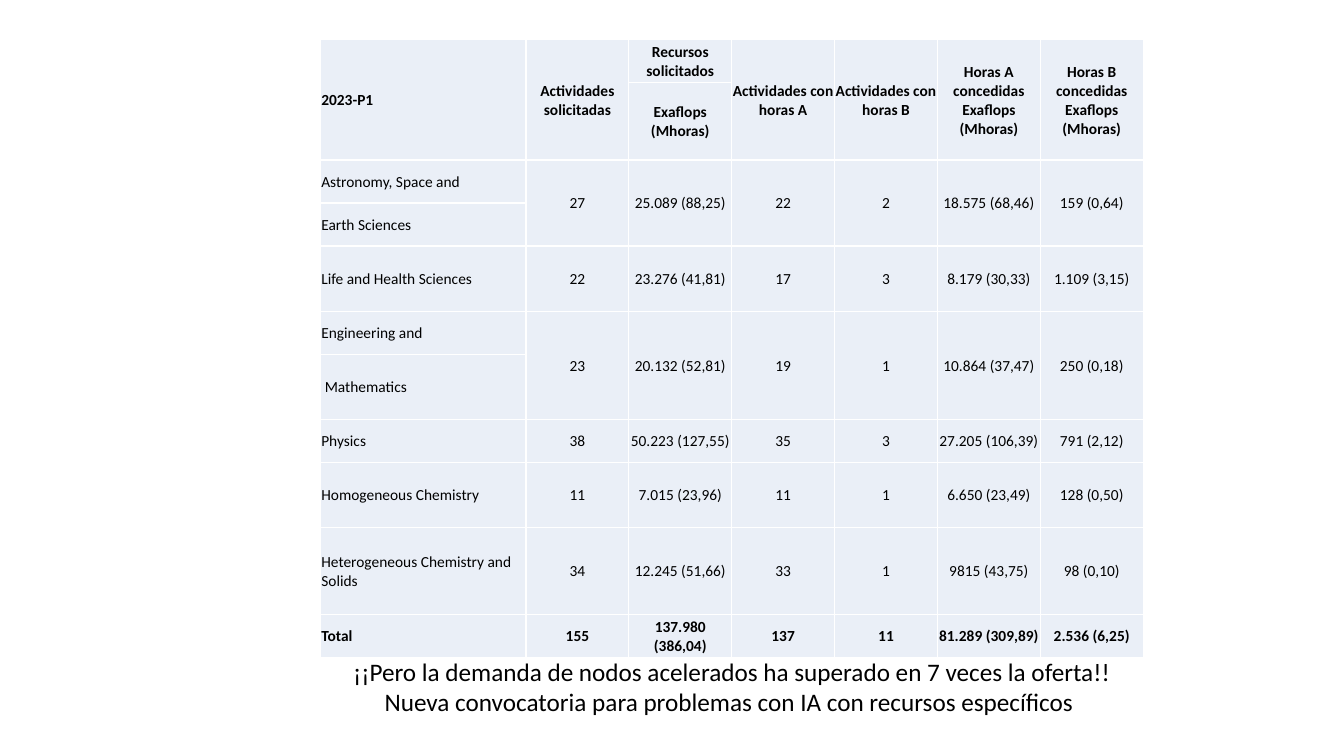
from dataclasses import dataclass

from pptx import Presentation
from pptx import util as u
from pptx.dml.color import RGBColor
from pptx.enum import text


@dataclass
class Theme:
    font: str = "Calibri"
    ink: RGBColor = RGBColor(0, 0, 0)
    cell_fill: RGBColor = RGBColor(0xEA, 0xEF, 0xF7)
    table_size: int = 11
    message_size: int = 18


theme = Theme()
CENTER = text.PP_ALIGN.CENTER


def px(length):
    return u.Emu(length * 9525)


def style_paragraph(paragraph, size, align, bold=False):
    paragraph.alignment = align
    for run in paragraph.runs:
        run.font.name = theme.font
        run.font.size = u.Pt(size)
        run.font.bold = bold
        run.font.color.rgb = theme.ink


# An empty string is a cell covered by the one above it.
allocations = [
    ["2023-P1", "Actividades solicitadas", "Recursos solicitados",
     "Actividades con horas A", "Actividades con horas B",
     "Horas A concedidas Exaflops (Mhoras)", "Horas B concedidas Exaflops (Mhoras)"],
    ["", "", "Exaflops (Mhoras)", "", "", "", ""],
    ["Astronomy, Space and", "27", "25.089 (88,25)", "22", "2", "18.575 (68,46)", "159 (0,64)"],
    ["Earth Sciences", "", "", "", "", "", ""],
    ["Life and Health Sciences", "22", "23.276 (41,81)", "17", "3", "8.179 (30,33)", "1.109 (3,15)"],
    ["Engineering and", "23", "20.132 (52,81)", "19", "1", "10.864 (37,47)", "250 (0,18)"],
    [" Mathematics", "", "", "", "", "", ""],
    ["Physics", "38", "50.223 (127,55)", "35", "3", "27.205 (106,39)", "791 (2,12)"],
    ["Homogeneous Chemistry", "11", "7.015 (23,96)", "11", "1", "6.650 (23,49)", "128 (0,50)"],
    ["Heterogeneous Chemistry and Solids", "34", "12.245 (51,66)", "33", "1", "9815 (43,75)", "98 (0,10)"],
    ["Total", "155", "137.980 (386,04)", "137", "11", "81.289 (309,89)", "2.536 (6,25)"],
]
column_widths = [196] + [98] * 6
row_heights = [41, 41, 41, 41, 62, 41, 62, 41, 62, 83, 41]
bold_rows = {0, 1, len(allocations) - 1}

prs = Presentation()
prs.slide_width, prs.slide_height = px(1280), px(720)
slide = prs.slides.add_slide(prs.slide_layouts[6])

# Allocation table
table = slide.shapes.add_table(
    len(row_heights), len(column_widths), px(305), px(38),
    px(sum(column_widths)), px(sum(row_heights))).table
table.first_row = False
table.horz_banding = False
for column, width in zip(table.columns, column_widths):
    column.width = px(width)
for row, height in zip(table.rows, row_heights):
    row.height = px(height)

for r, values in enumerate(allocations):
    for c, value in enumerate(values):
        cell = table.cell(r, c)
        cell.fill.solid()
        cell.fill.fore_color.rgb = theme.cell_fill
        cell.vertical_anchor = text.MSO_ANCHOR.MIDDLE
        cell.margin_left = cell.margin_right = cell.margin_top = px(1)
        cell.margin_bottom = 0
        if not value:
            table.cell(r - 1, c).merge(cell)
            continue
        cell.text_frame.text = value
        if c:
            align = CENTER
        else:
            align = text.PP_ALIGN.LEFT if r else text.PP_ALIGN.JUSTIFY
        style_paragraph(cell.text_frame.paragraphs[0], theme.table_size, align, r in bold_rows)

# Closing message
message = slide.shapes.add_textbox(px(322), px(620), px(750), px(68)).text_frame
message.word_wrap = False
message.auto_size = text.MSO_AUTO_SIZE.SHAPE_TO_FIT_TEXT
message.text = ("¡¡Pero la demanda de nodos acelerados ha superado en 7 veces la oferta!!\n"
                "Nueva convocatoria para problemas con IA con recursos específicos ")
for paragraph in message.paragraphs:
    style_paragraph(paragraph, theme.message_size, CENTER)

prs.save("out.pptx")
